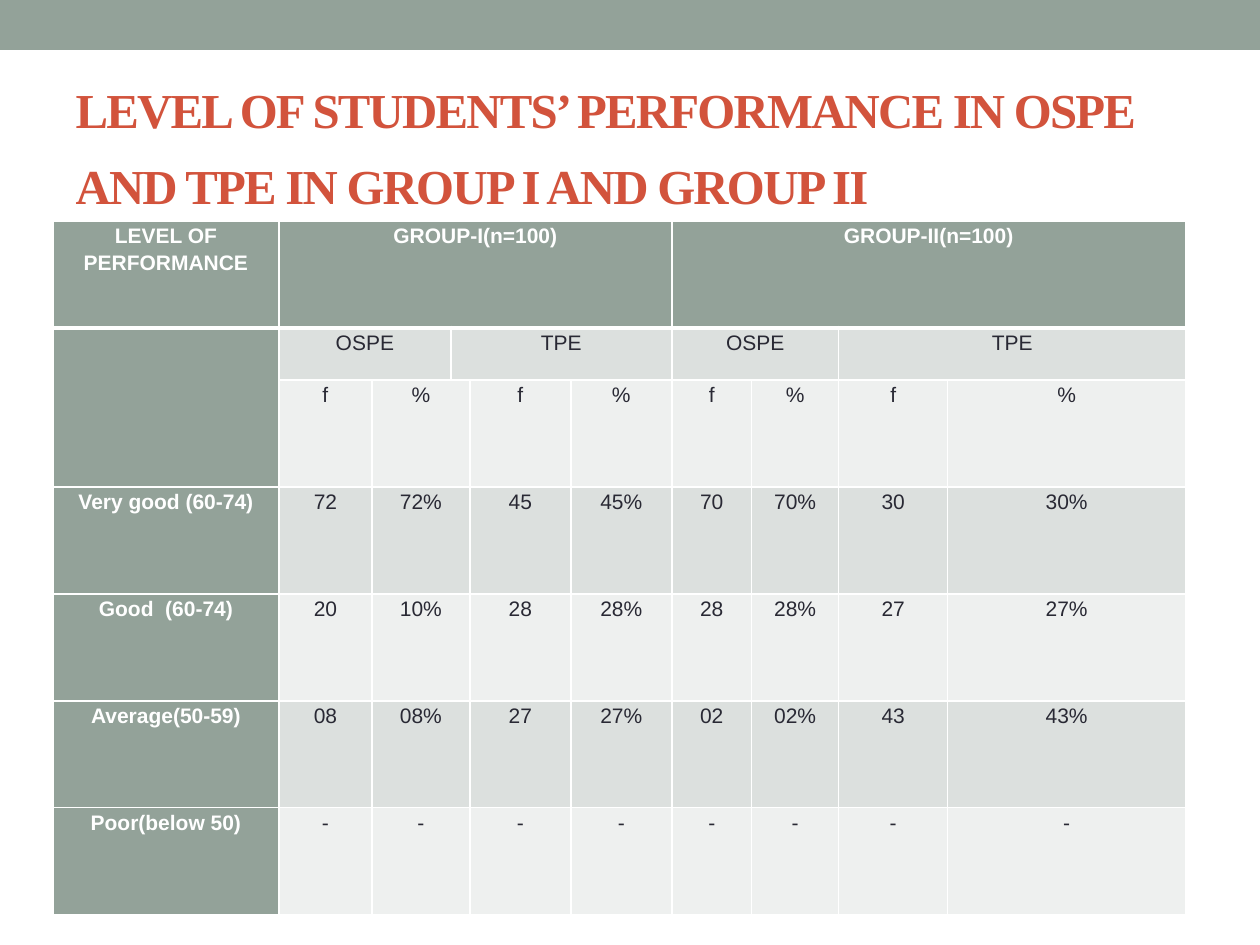
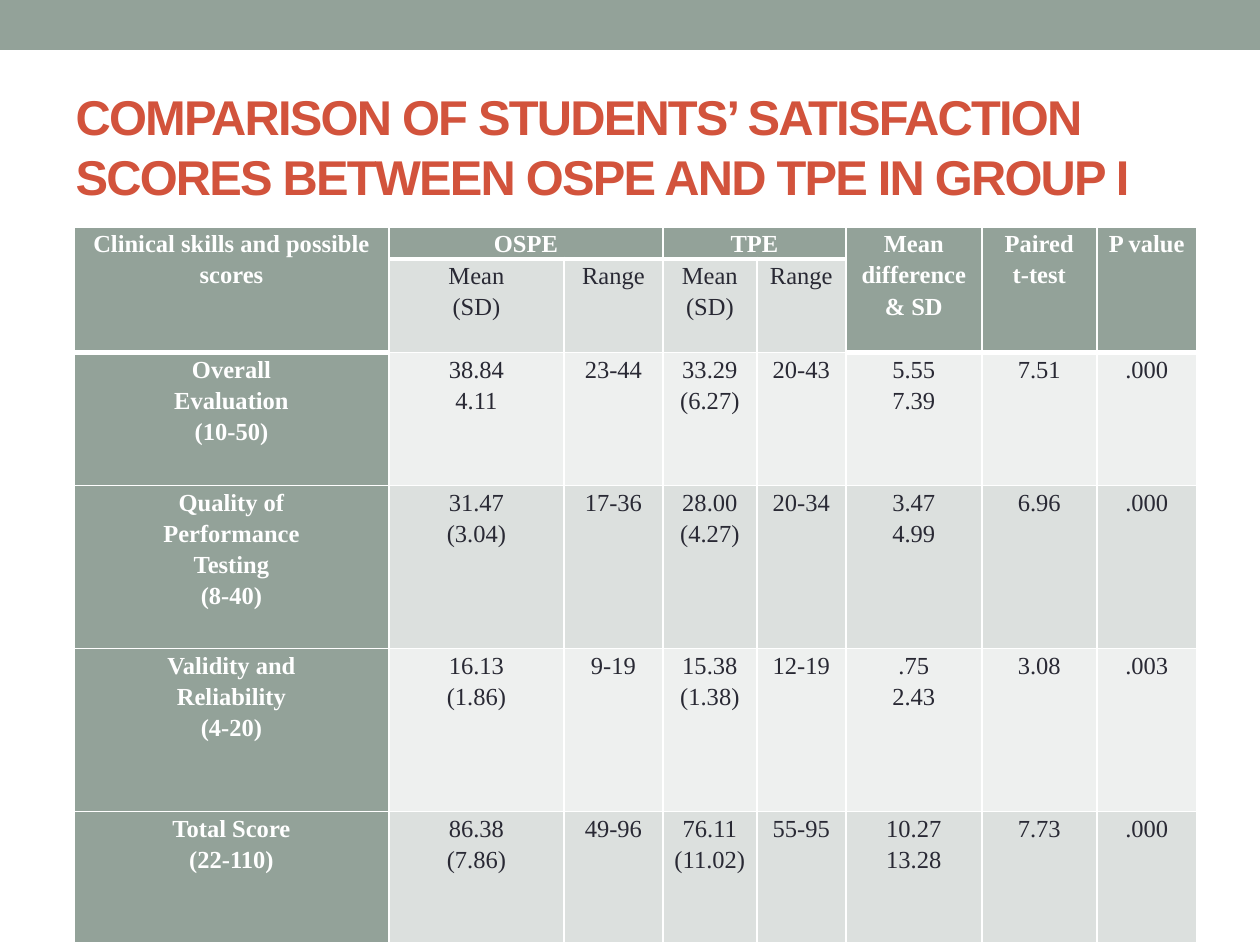
"""Build two slides of tables on student performance and satisfaction."""
from lxml import etree
from pptx import Presentation
from pptx import util as u
from pptx.dml.color import RGBColor
from pptx.enum import shapes, text
from pptx.oxml.ns import qn

PX = 914400 // 126
SAGE, RUST, INK, WHITE = "93A299", "D2533C", "292934", "FFFFFF"
BANDS = ("EEF0EF", "DCE0DE")
LEFT, UP = "<", "^"

LEVELS = {
    "title": "LEVEL OF STUDENTS’ PERFORMANCE IN OSPE AND TPE IN GROUP I AND GROUP II",
    "face": "Times New Roman", "top": 70, "lead": 1.3,
    "font": "Arial", "size": 12, "at": (53, 221),
    "cols": (226, 93, 79, 19, 101, 101, 80, 87, 109, 238),
    "rows": (107, 52, 107, 107, 107, 107, 107),
    "grid": [
        ["LEVEL OF PERFORMANCE", "GROUP-I(n=100)", LEFT, LEFT, LEFT, LEFT,
         "GROUP-II(n=100)", LEFT, LEFT, LEFT],
        ["", "OSPE", LEFT, "TPE", LEFT, LEFT, "OSPE", LEFT, "TPE", LEFT],
        [UP, "f", "%", LEFT, "f", "%", "f", "%", "f", "%"],
        ["Very good (60-74)", "72", "72%", LEFT, "45", "45%", "70", "70%", "30", "30%"],
        ["Good  (60-74)", "20", "10%", LEFT, "28", "28%", "28", "28%", "27", "27%"],
        ["Average(50-59)", "08", "08%", LEFT, "27", "27%", "02", "02%", "43", "43%"],
        ["Poor(below 50)", "-", "-", LEFT, "-", "-", "-", "-", "-", "-"],
    ],
}
SCORES = {
    "title": "COMPARISON OF STUDENTS’ SATISFACTION SCORES BETWEEN OSPE AND TPE IN GROUP I",
    "face": "Arial", "top": 77, "lead": 1.03,
    "font": "Times New Roman", "size": 14, "at": (74, 227),
    "cols": (315, 175, 99, 94, 89, 136, 115, 100),
    "rows": (32, 93, 133, 163, 163, 132),
    "grid": [
        ["Clinical skills and possible scores", "OSPE", LEFT, "TPE", LEFT,
         "Mean difference & SD", "Paired\nt-test", "P value"],
        [UP, "Mean\n(SD)", "Range", "Mean\n(SD)", "Range", UP, UP, UP],
        ["Overall\nEvaluation\n(10-50)", "38.84\n4.11", "23-44", "33.29\n(6.27)",
         "20-43", "5.55\n7.39", "7.51", ".000"],
        ["Quality of\nPerformance\nTesting\n(8-40)", "31.47\n(3.04)", "17-36",
         "28.00\n(4.27)", "20-34", "3.47\n4.99", "6.96", ".000"],
        ["Validity and\nReliability\n(4-20)", "16.13\n(1.86)", "9-19", "15.38\n(1.38)",
         "12-19", ".75\n2.43", "3.08", ".003"],
        ["Total Score\n(22-110)", "86.38\n(7.86)", "49-96", "76.11\n(11.02)",
         "55-95", "10.27\n13.28", "7.73", ".000"],
    ],
}


def px(*vals):
    return [u.Emu(val * PX) for val in vals]


def paint(obj, tint):
    obj.fill.solid()
    obj.fill.fore_color.rgb = RGBColor.from_string(tint)


def write(para, words, font, size, tint, bold):
    run = para.add_run()
    run.text = words
    run.font.name, run.font.size, run.font.bold = font, u.Pt(size), bold
    run.font.color.rgb = RGBColor.from_string(tint)
    return run


def add_band(slide):
    band = slide.shapes.add_shape(shapes.MSO_SHAPE.RECTANGLE, *px(0, 0, 1260, 50))
    band.shadow.inherit = False
    paint(band, SAGE)
    band.line.fill.background()


def add_title(slide, page):
    title = slide.shapes.title
    title.left, title.top, title.width, title.height = px(63, page["top"], 1134, 136)
    frame = title.text_frame
    frame.word_wrap = True
    frame.auto_size = text.MSO_AUTO_SIZE.NONE
    frame.vertical_anchor = text.MSO_ANCHOR.MIDDLE
    para = frame.paragraphs[0]
    para.alignment = text.PP_ALIGN.LEFT
    para.line_spacing = page["lead"]
    run = write(para, page["title"], page["face"], 27.9, RUST, True)
    run.font._element.set("spc", "-100")


def is_head(grid, row, col):
    while grid[row][col] == UP:
        row -= 1
    return row == 0


def add_edge(cell, side, points):
    props = cell._tc.get_or_add_tcPr()
    line = etree.SubElement(props, qn("a:ln" + side), w=str(u.Pt(points)))
    fill = etree.SubElement(line, qn("a:solidFill"))
    etree.SubElement(fill, qn("a:srgbClr"), val=WHITE)


def span(grid, row, col):
    wide = tall = 1
    while col + wide < len(grid[row]) and grid[row][col + wide] == LEFT:
        wide += 1
    while row + tall < len(grid) and grid[row + tall][col] == UP:
        tall += 1
    return tall, wide


def fill_cell(table, page, row, col):
    grid, cell = page["grid"], table.cell(row, col)
    head = is_head(grid, row, col)
    below = row > 0 and not head and is_head(grid, row - 1, col)
    for side, thick in (("L", False), ("R", False), ("T", below), ("B", head)):
        add_edge(cell, side, 3 if thick else 1)
    label = head or col == 0
    paint(cell, SAGE if label else BANDS[row % 2])
    cell.margin_left = cell.margin_right = u.Inches(0.07)
    cell.margin_top = cell.margin_bottom = 0
    words = grid[row][col]
    if words in (LEFT, UP):
        return
    tall, wide = span(grid, row, col)
    if tall * wide > 1:
        cell.merge(table.cell(row + tall - 1, col + wide - 1))
    if not words:
        return
    frame = cell.text_frame
    for num, part in enumerate(words.split("\n")):
        para = frame.add_paragraph() if num else frame.paragraphs[0]
        para.alignment = text.PP_ALIGN.CENTER
        para.line_spacing = 1.15
        write(para, part, page["font"], page["size"], WHITE if label else INK, label)


def add_grid(slide, page):
    cols, rows = page["cols"], page["rows"]
    place = px(*page["at"], sum(cols), sum(rows))
    table = slide.shapes.add_table(len(rows), len(cols), *place).table
    for col, wide in zip(table.columns, px(*cols)):
        col.width = wide
    for row, tall in zip(table.rows, px(*rows)):
        row.height = tall
    for row in range(len(rows)):
        for col in range(len(cols)):
            fill_cell(table, page, row, col)


def main():
    deck = Presentation()
    deck.slide_width, deck.slide_height = px(1260, 945)
    for page in (LEVELS, SCORES):
        slide = deck.slides.add_slide(deck.slide_layouts[5])
        add_band(slide)
        add_title(slide, page)
        add_grid(slide, page)
    deck.save("out.pptx")


if __name__ == "__main__":
    main()
